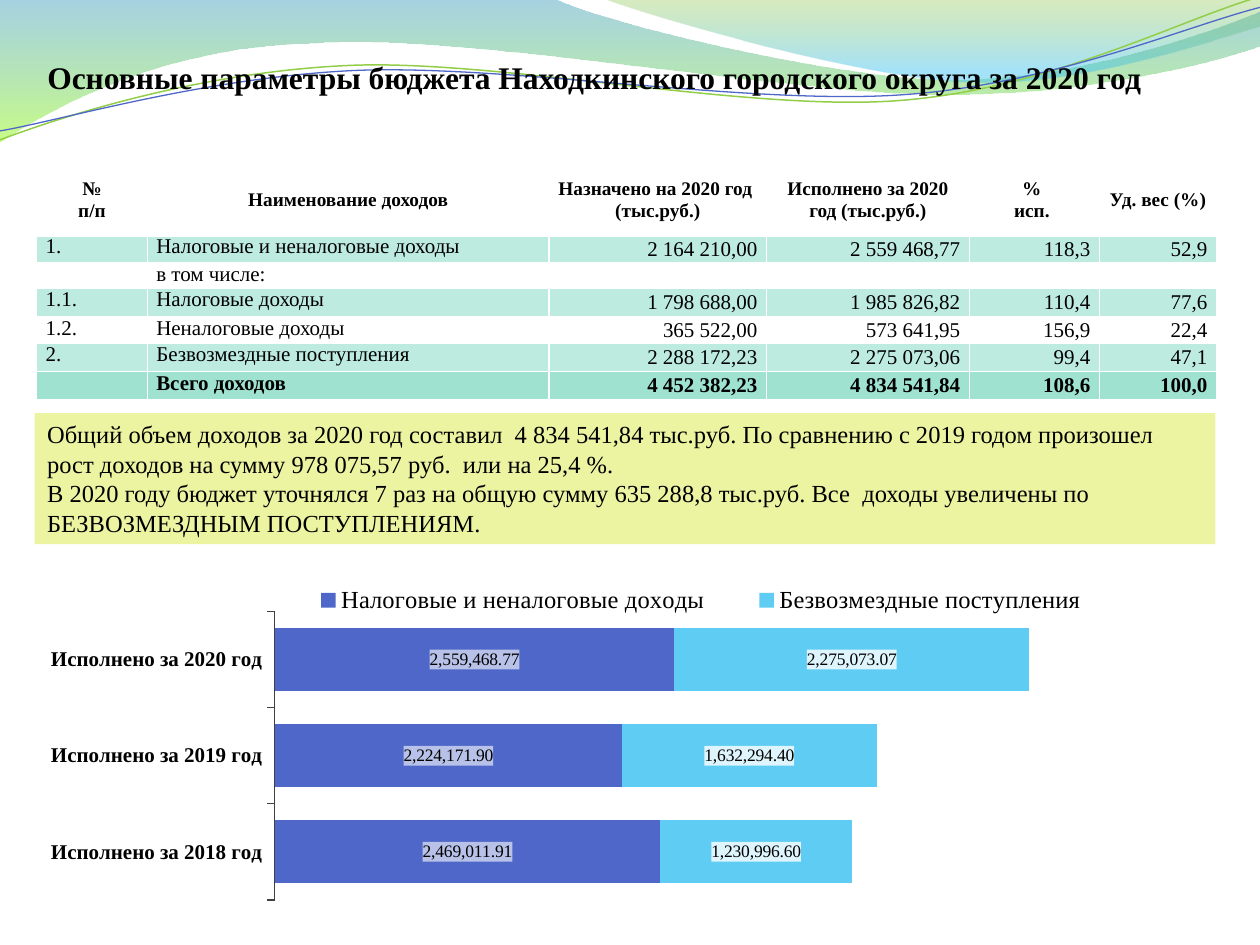
from lxml.etree import SubElement
from pptx import Presentation
from pptx.chart.data import CategoryChartData
from pptx.dml.color import RGBColor
from pptx.enum.chart import XL_CHART_TYPE, XL_LEGEND_POSITION, XL_TICK_LABEL_POSITION, XL_TICK_MARK
from pptx.enum.shapes import MSO_SHAPE
from pptx.enum.text import MSO_ANCHOR, MSO_AUTO_SIZE, PP_ALIGN
from pptx.oxml import parse_xml
from pptx.oxml.ns import nsdecls, qn
from pptx.util import Cm, Pt


def rgb(value):
    return RGBColor.from_string(value)


def set_font(font, size, bold=False):
    font.name = "Times New Roman"
    font.size = Pt(size)
    font.bold = bold
    font.color.rgb = rgb("000000")


prs = Presentation()
prs.slide_width, prs.slide_height = Cm(25.4), Cm(19.05)
s = prs.slides.add_slide(prs.slide_layouts[5])

waves = [
    ((0, 0), [[(11.18, -0.03)],
              [(12.09, 0.43), (16.87, 1.6), (19.25, 1.6)],
              [(21.67, 1.6), (24.33, 0.66), (25.4, 0.23)],
              [(25.43, 0.91)],
              [(24.97, 1.12), (22.1, 1.93), (18.95, 1.9)],
              [(15.8, 1.9), (9.7, 0.71), (6.53, 0.86)],
              [(3.28, 0.91), (1.17, 2.11), (-0.03, 2.87)],
              [(0, 0)]],
     [(0, "3B9CBF", 45), (1, "9CFA24", 55)], None),
    ((12.17, -0.03), [[(12.93, 0.28), (17.32, 1.57), (19.53, 1.65)],
                      [(21.74, 1.75), (24.41, 0.81), (25.4, 0.53)],
                      [(25.4, 0)],
                      [(12.17, -0.03)]],
     [(0, "7EBE2C", 30), (0.8, "39C1F1", 45)], None),
    ((0, 2.82), [[(1.22, 2.36), (4.01, 1.45), (7.04, 1.32)],
                 [(10.03, 1.19), (15.06, 2.26), (18.11, 2.03)],
                 [(21.16, 1.8), (23.83, 0.38), (25.35, -0.05)]],
     None, ("93CE48", 0.85)),
    ((0, 2.64), [[(1.19, 2.44), (4.17, 1.55), (7.19, 1.42)],
                 [(10.24, 1.3), (15.16, 2.13), (18.21, 1.91)],
                 [(21.23, 1.7), (23.9, 0.53), (25.4, 0.15)]],
     None, ("4E67C8", 0.75)),
]
for start, segments, stops, line in waves:
    builder = s.shapes.build_freeform(Cm(start[0]), Cm(start[1]))
    builder.add_line_segments([(Cm(x), Cm(y)) for segment in segments for x, y in segment],
                              close=stops is not None)
    sp = builder.convert_to_shape()
    lines = iter(list(sp._element.iter(qn("a:lnTo"))))
    for segment in segments:
        nodes = [next(lines) for point in segment]
        if len(nodes) == 3:
            curve = parse_xml(f'<a:cubicBezTo {nsdecls("a")}/>')
            nodes[0].addprevious(curve)
            for node in nodes:
                curve.append(node[0])
                node.getparent().remove(node)
    sp.shadow.inherit = False
    if stops:
        sp.line.fill.background()
        sp.fill.gradient()
        sp.fill.gradient_angle = 270
        for stop, (position, color, alpha) in zip(sp.fill.gradient_stops, stops):
            stop.position = position
            stop.color.rgb = rgb(color)
        for node, (position, color, alpha) in zip(sp._element.iter(qn("a:srgbClr")), stops):
            SubElement(node, qn("a:alpha"), val=str(alpha * 1000))
    else:
        sp.fill.background()
        sp.line.color.rgb = rgb(line[0])
        sp.line.width = Pt(line[1])

title = s.shapes.title
s.shapes._spTree.append(title._element)
title.left, title.top, title.width, title.height = Cm(0.7), Cm(1.04), Cm(22.94), Cm(1.02)
tf = title.text_frame
tf.text = "Основные параметры бюджета Находкинского городского округа за 2020 год"
tf.word_wrap = False
tf.auto_size = MSO_AUTO_SIZE.SHAPE_TO_FIT_TEXT
tf.vertical_anchor = MSO_ANCHOR.TOP
tf.paragraphs[0].alignment = PP_ALIGN.LEFT
set_font(tf.paragraphs[0].runs[0].font, 18, True)

rows = [
    ["№\nп/п", "Наименование доходов", "Назначено на 2020 год  (тыс.руб.)",
     "Исполнено за 2020 год (тыс.руб.)", "% \nисп. ", "Уд. вес (%)"],
    ["1.", "Налоговые и неналоговые доходы", "2 164 210,00", "2 559 468,77", "118,3", "52,9"],
    ["", "в том числе:", "", "", "", ""],
    ["1.1.", "Налоговые доходы", "1 798 688,00", "1 985 826,82", "110,4", "77,6"],
    ["1.2.", "Неналоговые доходы", "365 522,00", "573 641,95", "156,9", "22,4"],
    ["2.", "Безвозмездные поступления", "2 288 172,23", "2 275 073,06", "99,4", "47,1"],
    ["", "Всего доходов", "4 452 382,23", "4 834 541,84", "108,6", "100,0"],
]
widths = [2.23, 8.1, 4.38, 4.09, 2.62, 2.36]
heights = [1.41, 0.56, 0.5, 0.58, 0.53, 0.57, 0.58]
fills = [None, "BEEBDF", "FFFFFF", "BEEBDF", "FFFFFF", "BEEBDF", "9EE2CF"]
table = s.shapes.add_table(len(rows), len(widths), Cm(0.74), Cm(3.33),
                           Cm(sum(widths)), Cm(sum(heights))).table
for column, width in zip(table.columns, widths):
    column.width = Cm(width)
for i, (row, height, fill) in enumerate(zip(rows, heights, fills)):
    table.rows[i].height = Cm(height)
    header, total = i == 0, i == len(rows) - 1
    for j, text in enumerate(row):
        cell = table.cell(i, j)
        cell.text = text
        cell.margin_left = cell.margin_right = Cm(0.18)
        cell.margin_top = cell.margin_bottom = 0
        cell.vertical_anchor = MSO_ANCHOR.MIDDLE if header or j > 1 else MSO_ANCHOR.TOP
        for p in cell.text_frame.paragraphs:
            p.alignment = PP_ALIGN.CENTER if header else PP_ALIGN.RIGHT if j > 1 else PP_ALIGN.LEFT
            for r in p.runs:
                set_font(r.font, 11 if header else 12, header or total)
            if not text:
                SubElement(p._p, qn("a:endParaRPr"), sz="1200")
        for side in ("lnL", "lnR", "lnT", "lnB"):
            points = 3 if header and side == "lnB" else 1
            cell._tc.get_or_add_tcPr().append(parse_xml(
                f'<a:{side} {nsdecls("a")} w="{Pt(points)}"><a:solidFill>'
                f'<a:srgbClr val="FFFFFF"/></a:solidFill></a:{side}>'))
        if fill:
            cell.fill.solid()
            cell.fill.fore_color.rgb = rgb(fill)
        else:
            cell.fill.background()

sp = s.shapes.add_shape(MSO_SHAPE.RECTANGLE, Cm(0.7), Cm(8.33), Cm(23.8), Cm(2.64))
sp.shadow.inherit = False
sp.fill.solid()
sp.fill.fore_color.rgb = rgb("ECF4A2")
sp.line.fill.background()
tf = sp.text_frame
tf.word_wrap = True
tf.auto_size = MSO_AUTO_SIZE.SHAPE_TO_FIT_TEXT
tf.vertical_anchor = MSO_ANCHOR.TOP
tf.text = (
    "Общий объем доходов за 2020 год составил  4 834 541,84 тыс.руб. По сравнению с 2019 годом "
    "произошел рост доходов на сумму 978 075,57 руб.  или на 25,4 %.\n"
    "В 2020 году бюджет уточнялся 7 раз на общую сумму 635 288,8 тыс.руб. Все  доходы увеличены "
    "по БЕЗВОЗМЕЗДНЫМ ПОСТУПЛЕНИЯМ.")
for p in tf.paragraphs:
    p.alignment = PP_ALIGN.LEFT
    set_font(p.runs[0].font, 14)

data = CategoryChartData(number_format="#,##0.00")
data.categories = [f"Исполнено за {year} год" for year in (2018, 2019, 2020)]
data.add_series("Налоговые и неналоговые доходы", (2469011.91, 2224171.9, 2559468.77))
data.add_series("Безвозмездные поступления", (1230996.6, 1632294.4, 2275073.07))
chart = s.shapes.add_chart(XL_CHART_TYPE.BAR_STACKED, Cm(0.7), Cm(10.97),
                           Cm(24.2), Cm(7.55), data).chart
chart.has_title = False
chart.font.name = "Cambria"
chart.font.size = Pt(10)
chart.font.color.rgb = rgb("000000")
chart.has_legend = True
chart.legend.position = XL_LEGEND_POSITION.TOP
chart.legend.include_in_layout = False
set_font(chart.legend.font, 14)

axis = chart.category_axis
axis.major_tick_mark = XL_TICK_MARK.OUTSIDE
axis.tick_label_position = XL_TICK_LABEL_POSITION.LOW
axis.format.line.color.rgb = rgb("404040")
set_font(axis.tick_labels.font, 12, True)
axis = chart.value_axis
axis.visible = False
axis.has_major_gridlines = False
axis.minimum_scale, axis.maximum_scale = 0, 6000000

plot = chart.plots[0]
plot.gap_width, plot.overlap = 52, 100
plot.vary_by_categories = False
for series, color, tint in zip(plot.series, ("4E67C8", "5ECCF3"), ("B8C2E9", "DFF5FD")):
    series.format.fill.solid()
    series.format.fill.fore_color.rgb = rgb(color)
    labels = series.data_labels
    labels.show_value = True
    labels.number_format = "#,##0.00"
    labels.number_format_is_linked = False
    set_font(labels.font, 10)
    labels._element.find(qn("c:numFmt")).addnext(parse_xml(
        f'<c:spPr {nsdecls("c", "a")}><a:solidFill><a:srgbClr val="{tint}"/>'
        '</a:solidFill></c:spPr>'))

plot_area = chart._chartSpace.chart.plotArea
legend = chart.legend._element
for parent, index, target, box in (
        (plot_area, 0, '<c:layoutTarget val="inner"/>', (0.2, 0.18, 0.78, 0.77)),
        (legend, 1, "", (0.2, 0.1, 0.71, 0.1))):
    for old in parent.findall(qn("c:layout")):
        parent.remove(old)
    modes = '<c:xMode val="edge"/><c:yMode val="edge"/>'
    sizes = "".join(f'<c:{k} val="{v}"/>' for k, v in zip("xywh", box))
    parent.insert(index, parse_xml(
        f'<c:layout {nsdecls("c")}><c:manualLayout>{target}{modes}{sizes}</c:manualLayout></c:layout>'))

prs.save("out.pptx")
